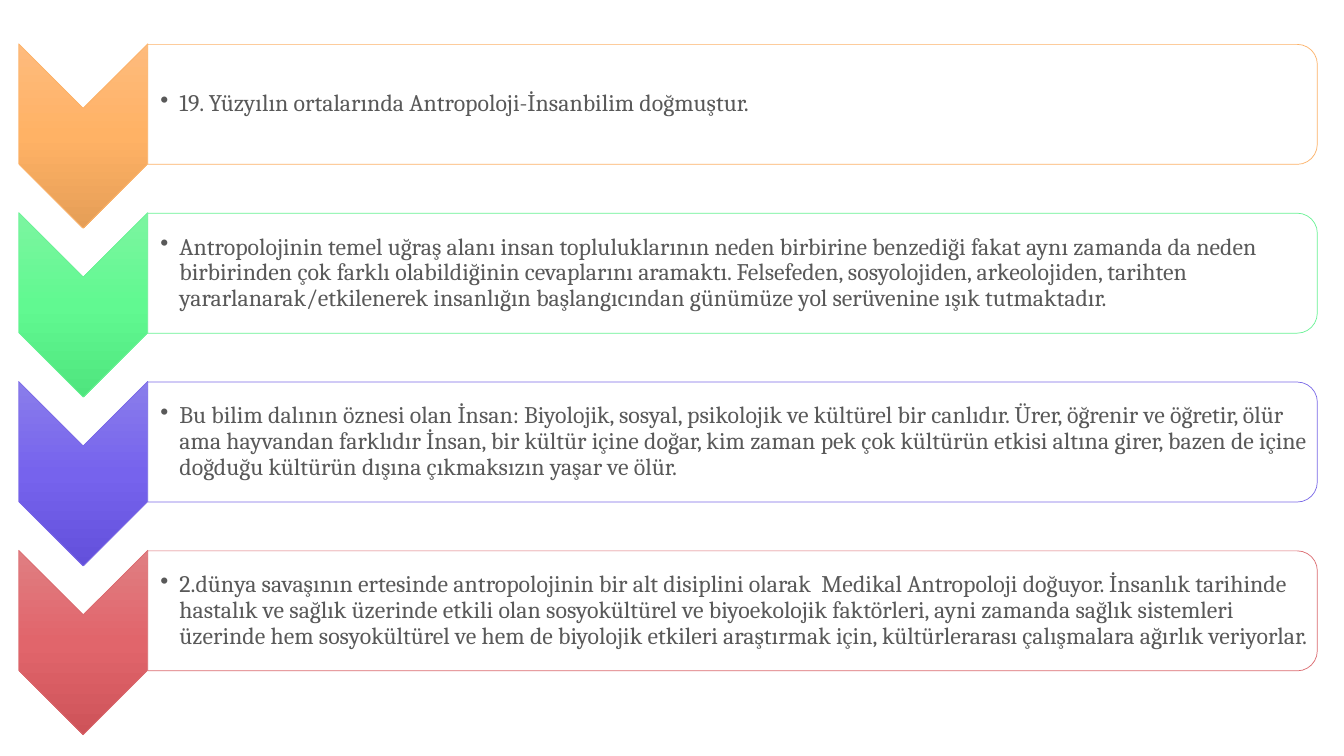
from dataclasses import dataclass

from lxml import etree
from pptx import Presentation
from pptx import util as u
from pptx.dml.color import RGBColor
from pptx.enum import shapes, text
from pptx.oxml.ns import qn


@dataclass(frozen=True)
class Theme:
    font: str = "Cambria"
    body_size: float = 17
    ink: str = "595959"
    card: str = "FFFFFF"
    outline: float = 0.5
    # Each step: gradient from top to bottom, then outline
    steps: tuple = (
        (("FEBB7D", "FFB265", "E59E57"), "FCB268"),
        (("7CF5A0", "61F991", "4FE57E"), "68F294"),
        (("8A7DEB", "7663ED", "6350DB"), "7A69E7"),
        (("E07E82", "E1656B", "CE5359"), "DB6B70"),
    )


STATEMENTS = (
    "19. Yüzyılın ortalarında Antropoloji-İnsanbilim doğmuştur.",
    "Antropolojinin temel uğraş alanı insan topluluklarının neden birbirine "
    "benzediği fakat aynı zamanda da neden birbirinden çok farklı olabildiğinin "
    "cevaplarını aramaktı. Felsefeden, sosyolojiden, arkeolojiden, tarihten "
    "yararlanarak/etkilenerek insanlığın başlangıcından günümüze yol serüvenine "
    "ışık tutmaktadır.",
    "Bu bilim dalının öznesi olan İnsan: Biyolojik, sosyal, psikolojik ve "
    "kültürel bir canlıdır. Ürer, öğrenir ve öğretir, ölür ama hayvandan "
    "farklıdır İnsan, bir kültür içine doğar, kim zaman pek çok kültürün etkisi "
    "altına girer, bazen de içine doğduğu kültürün dışına çıkmaksızın yaşar ve ölür.",
    "2.dünya savaşının ertesinde antropolojinin bir alt disiplini olarak  Medikal "
    "Antropoloji doğuyor. İnsanlık tarihinde hastalık ve sağlık üzerinde etkili "
    "olan sosyokültürel ve biyoekolojik faktörleri, ayni zamanda sağlık "
    "sistemleri üzerinde hem sosyokültürel ve hem de biyolojik etkileri "
    "araştırmak için, kültürlerarası çalışmalara ağırlık veriyorlar.",
)
FIRST_CENTER = 1.035
PITCH = 1.675


def write_bullet(paragraph, content, *, font, size, color, indent=0.19, spacing=0.9):
    properties = paragraph._p.get_or_add_pPr()
    properties.set("marL", str(u.Inches(indent)))
    properties.set("indent", str(-u.Inches(indent)))
    etree.SubElement(properties, qn("a:buChar"), char="•")
    paragraph.level = 1
    paragraph.alignment = text.PP_ALIGN.LEFT
    paragraph.line_spacing = spacing
    run = paragraph.add_run()
    run.text = content
    run.font.name = font
    run.font.size = u.Pt(size)
    run.font.color.rgb = RGBColor.from_string(color)


class ChevronList:
    def __init__(self, slide, theme):
        self.slide = slide
        self.theme = theme

    def turned_shape(self, kind, center_x, center_y, width, height, outline):
        """Add a shape turned a quarter clockwise about its center."""
        shape = self.slide.shapes.add_shape(
            kind, u.Inches(center_x - width / 2), u.Inches(center_y - height / 2),
            u.Inches(width), u.Inches(height))
        shape.rotation = 90
        shape.shadow.inherit = False
        shape.line.color.rgb = RGBColor.from_string(outline)
        shape.line.width = u.Pt(self.theme.outline)
        return shape

    def chevron(self, center_y, gradient, outline):
        shape = self.turned_shape(shapes.MSO_SHAPE.CHEVRON, 0.825, center_y,
                                  1.83, 1.28, outline)
        shape.fill.gradient()
        fill = shape._element.spPr.find(qn("a:gradFill"))
        fill.set("rotWithShape", "0")
        fill.find(qn("a:lin")).set("ang", "5400000")
        stops = fill.find(qn("a:gsLst"))
        for stop in list(stops):
            stops.remove(stop)
        for position, color in zip((0, 50000, 100000), gradient):
            stop = etree.SubElement(stops, qn("a:gs"), pos=str(position))
            etree.SubElement(stop, qn("a:srgbClr"), val=color)

    def card(self, center_y, outline):
        shape = self.turned_shape(shapes.MSO_SHAPE.ROUND_2_SAME_RECTANGLE, 7.265,
                                  center_y, 1.19, 11.6, outline)
        shape.fill.solid()
        shape.fill.fore_color.rgb = RGBColor.from_string(self.theme.card)
        color = shape._element.spPr.find(qn("a:solidFill"))[0]
        etree.SubElement(color, qn("a:alpha"), val="90000")

    def statement(self, center_y, content):
        height = 1.07
        box = self.slide.shapes.add_textbox(
            u.Inches(1.46), u.Inches(center_y - height / 2),
            u.Inches(11.54), u.Inches(height))
        frame = box.text_frame
        frame.word_wrap = True
        frame.vertical_anchor = text.MSO_ANCHOR.MIDDLE
        frame.margin_left = u.Inches(0.13)
        frame.margin_top = frame.margin_right = frame.margin_bottom = u.Inches(0.01)
        write_bullet(frame.paragraphs[0], content, font=self.theme.font,
                     size=self.theme.body_size, color=self.theme.ink)


def main():
    deck = Presentation()
    deck.slide_width, deck.slide_height = u.Inches(13.33), u.Inches(7.5)
    theme = Theme()
    blank_layout = deck.slide_layouts.get_by_name("Blank")
    history = ChevronList(deck.slides.add_slide(blank_layout), theme)
    for index, (content, (gradient, outline)) in enumerate(zip(STATEMENTS, theme.steps)):
        center_y = FIRST_CENTER + index * PITCH
        history.chevron(center_y + 0.315, gradient, outline)
        history.card(center_y, outline)
        history.statement(center_y, content)
    deck.save("out.pptx")


if __name__ == "__main__":
    main()
